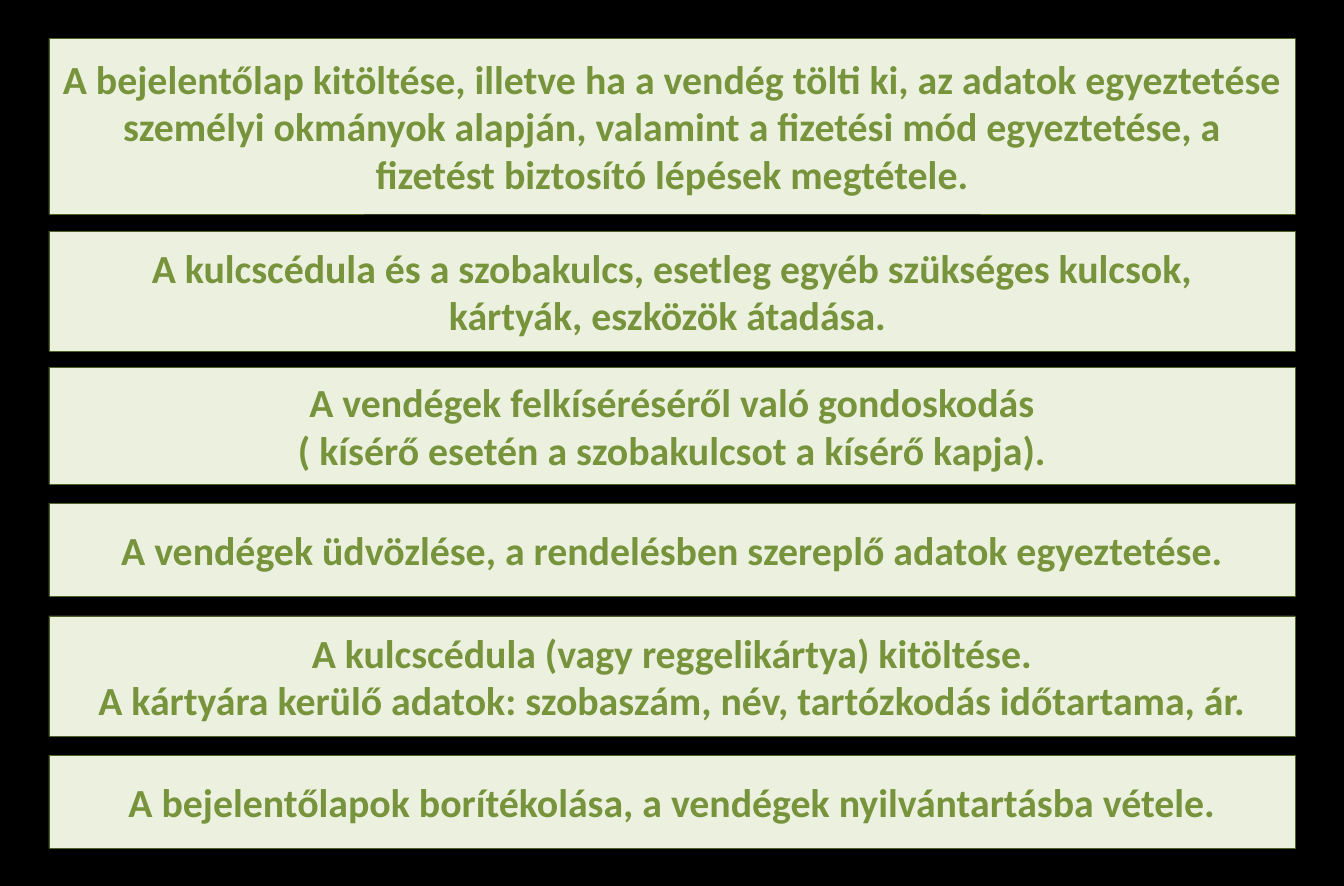
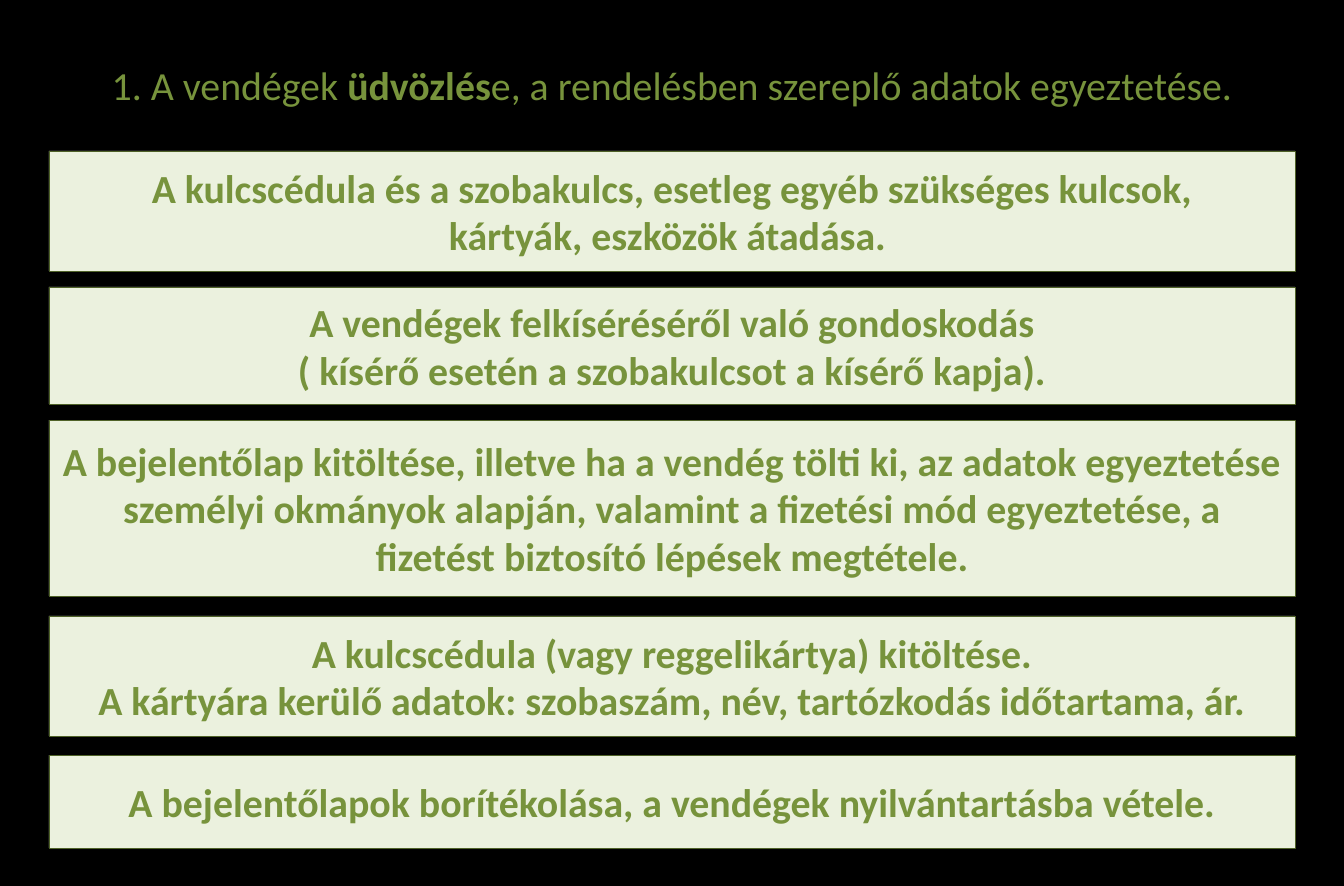
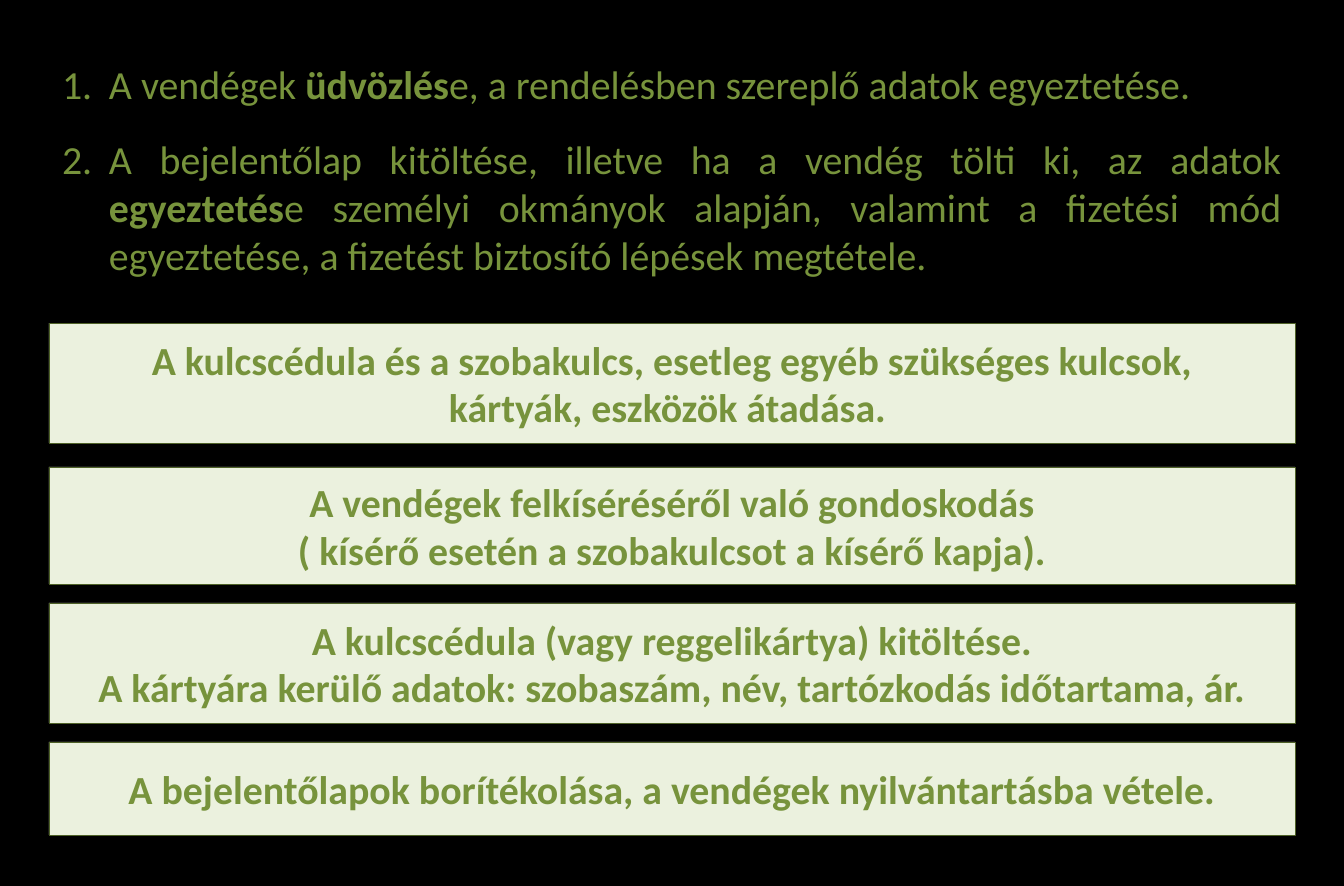
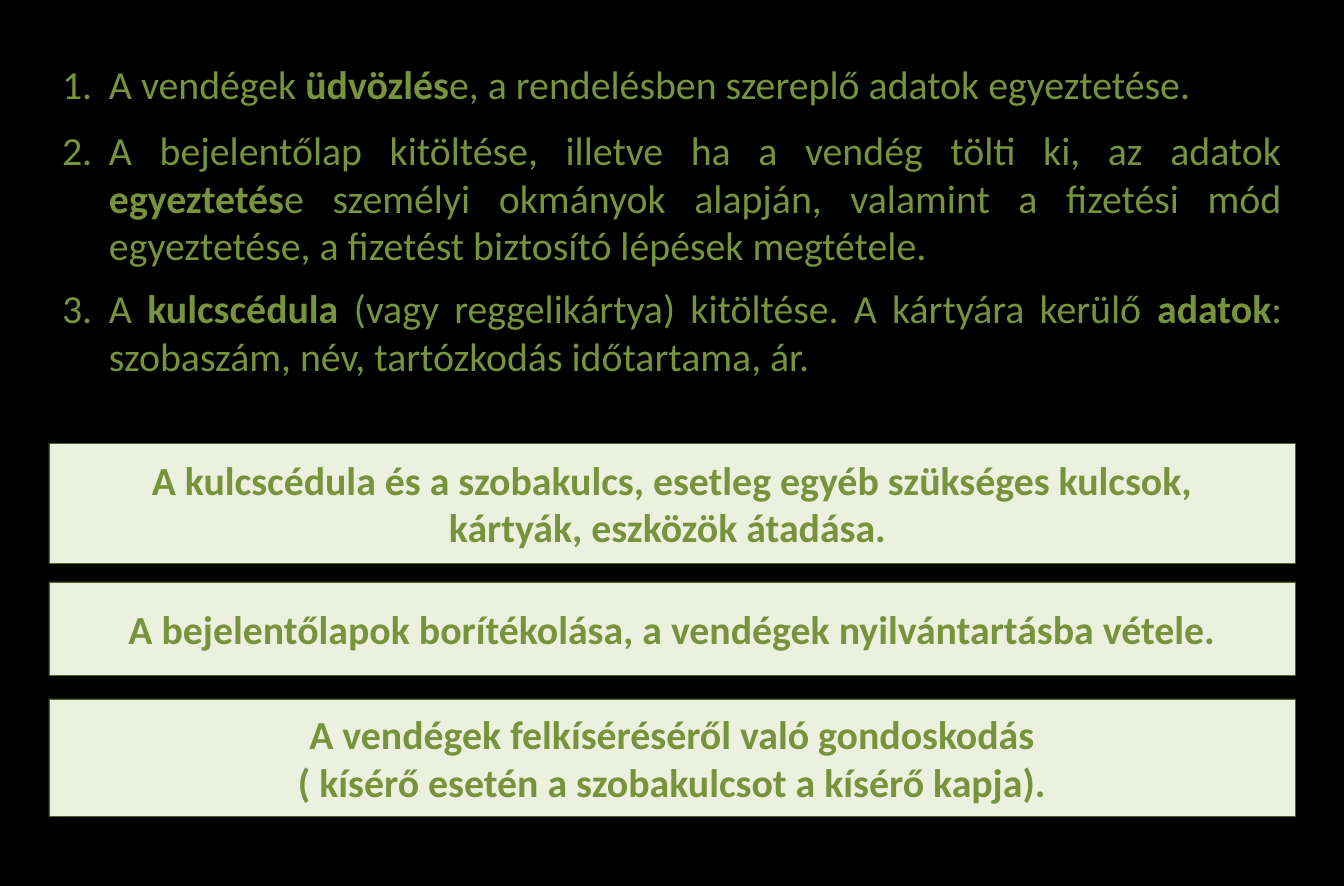
from lxml.etree import SubElement
from pptx import Presentation
from pptx.dml.color import RGBColor
from pptx.enum.shapes import MSO_SHAPE as SHAPE
from pptx.enum.text import MSO_ANCHOR as ANCHOR, MSO_AUTO_SIZE as AUTO_SIZE, PP_ALIGN as ALIGN
from pptx.oxml.ns import qn
from pptx.util import Emu, Pt

BLACK = RGBColor(0x00, 0x00, 0x00)
PALE_GREEN = RGBColor(0xEB, 0xF1, 0xDE)
GREEN = RGBColor(0x77, 0x93, 0x3C)
DARK_GREEN = RGBColor(0x4F, 0x62, 0x28)
FONT, TEXT_SIZE = "Calibri", Pt(34)

# Lengths in px
SCALE = 914400 / 84.4
PAGE_WIDTH, PAGE_HEIGHT = 1344, 886
LEFT, WIDTH = 49, 1246
INSET_X, INSET_Y = 13, 7
TITLE_TOP, TITLE_HEIGHT = 38, 93
LIST_TOP, INDENT = 53, 47

BLANK, TITLE_ONLY, TITLE_AND_CONTENT = 6, 5, 1

# Name: (height, text)
BANDS = {
    "registration": (176, "A bejelentőlap kitöltése, illetve ha a vendég tölti ki, az adatok "
                          "egyeztetése személyi okmányok alapján, valamint a fizetési mód "
                          "egyeztetése, a fizetést biztosító lépések megtétele."),
    "handover": (120, "A kulcscédula és a szobakulcs, esetleg egyéb szükséges kulcsok,\v"
                      "kártyák, eszközök átadása. "),
    "escort": (117, "A vendégek felkíséréséről való gondoskodás\v"
                    "( kísérő esetén a szobakulcsot a kísérő kapja)."),
    "greeting": (93, "A vendégek üdvözlése, a rendelésben szereplő adatok egyeztetése."),
    "key_card": (120, "A kulcscédula (vagy reggelikártya) kitöltése.\v"
                      "A kártyára kerülő adatok: szobaszám, név, tartózkodás időtartama, ár."),
    "filing": (93, "A bejelentőlapok borítékolása, a vendégek nyilvántartásba vétele."),
}

# Asterisks enclose bold words
GREETING_STEP = "A vendégek *üdvözlés*e, a rendelésben szereplő adatok egyeztetése."
REGISTRATION_STEP = ("A bejelentőlap kitöltése, illetve ha a vendég tölti ki, az adatok "
                     "*egyeztetés*e személyi okmányok alapján, valamint a fizetési mód "
                     "egyeztetése, a fizetést biztosító lépések megtétele.")
KEY_CARD_STEP = ("A *kulcscédula* (vagy reggelikártya) kitöltése. A kártyára kerülő "
                 "*adatok*: szobaszám, név, tartózkodás időtartama, ár.")

# Steps are (text, points before); bands are name: top
PAGES = [
    {"layout": BLANK,
     "bands": {"registration": 38, "handover": 231, "escort": 367,
               "greeting": 503, "key_card": 616, "filing": 755}},
    {"layout": TITLE_ONLY, "title": "1. " + GREETING_STEP,
     "bands": {"handover": 151, "escort": 287, "registration": 420,
               "key_card": 616, "filing": 755}},
    {"layout": TITLE_AND_CONTENT,
     "steps": [(GREETING_STEP, 0), (REGISTRATION_STEP, 23)], "list_height": 245,
     "bands": {"handover": 323, "escort": 467, "key_card": 603, "filing": 742}},
    {"layout": TITLE_AND_CONTENT,
     "steps": [(GREETING_STEP, 0), (REGISTRATION_STEP, 15), (KEY_CARD_STEP, 13)],
     "list_height": 340,
     "bands": {"handover": 443, "filing": 582, "escort": 699}},
]


def px(length):
    return Emu(round(length * SCALE))


def place(box, top, height):
    box.left, box.top, box.width, box.height = map(px, (LEFT, top, WIDTH, height))


def prepare_frame(box, anchor):
    frame = box.text_frame
    frame.word_wrap = True
    frame.auto_size = AUTO_SIZE.NONE
    frame.vertical_anchor = anchor
    frame.margin_left = frame.margin_right = px(INSET_X)
    frame.margin_top = frame.margin_bottom = px(INSET_Y)
    return frame


def style_span(span, bold):
    span.font.name, span.font.size, span.font.bold = FONT, TEXT_SIZE, bold
    span.font.color.rgb = GREEN


def add_spans(para, text):
    """Split the text at asterisks; every second part is bold."""
    for index, part in enumerate(text.split("*")):
        span = para.add_run()
        span.text = part
        style_span(span, index % 2 == 1)


def number_paragraph(para):
    properties = para._p.get_or_add_pPr()
    properties.set("marL", str(px(INDENT)))
    properties.set("indent", str(-px(INDENT)))
    SubElement(properties, qn("a:buFont"), typeface=FONT)
    SubElement(properties, qn("a:buAutoNum"), type="arabicPeriod")


def fill_title(box, text):
    place(box, TITLE_TOP, TITLE_HEIGHT)
    para = prepare_frame(box, ANCHOR.MIDDLE).paragraphs[0]
    para.alignment = ALIGN.CENTER
    add_spans(para, text)


def fill_steps(box, steps, height):
    place(box, LIST_TOP, height)
    frame = prepare_frame(box, ANCHOR.TOP)
    for index, (text, before) in enumerate(steps):
        para = frame.add_paragraph() if index else frame.paragraphs[0]
        number_paragraph(para)
        para.alignment = ALIGN.JUSTIFY
        para.space_before = Pt(before)
        add_spans(para, text)


def add_band(page, name, top):
    height, text = BANDS[name]
    band = page.shapes.add_shape(SHAPE.RECTANGLE, *map(px, (LEFT, top, WIDTH, height)))
    band.shadow.inherit = False
    band.fill.solid()
    band.fill.fore_color.rgb = PALE_GREEN
    band.line.color.rgb = DARK_GREEN
    band.line.width = Pt(0.75)
    para = prepare_frame(band, ANCHOR.MIDDLE).paragraphs[0]
    para.text = text
    para.alignment = ALIGN.CENTER
    for span in para.runs:
        style_span(span, True)


def main():
    deck = Presentation()
    deck.slide_width, deck.slide_height = px(PAGE_WIDTH), px(PAGE_HEIGHT)
    background = deck.slide_master.background.fill
    background.solid()
    background.fore_color.rgb = BLACK

    for content in PAGES:
        page = deck.slides.add_slide(deck.slide_layouts[content["layout"]])
        if "title" in content:
            fill_title(page.shapes.title, content["title"])
        if "steps" in content:
            title = page.shapes.title.element
            title.getparent().remove(title)
            fill_steps(page.placeholders[1], content["steps"], content["list_height"])
        for name, top in content["bands"].items():
            add_band(page, name, top)
    deck.save("out.pptx")


if __name__ == "__main__":
    main()
